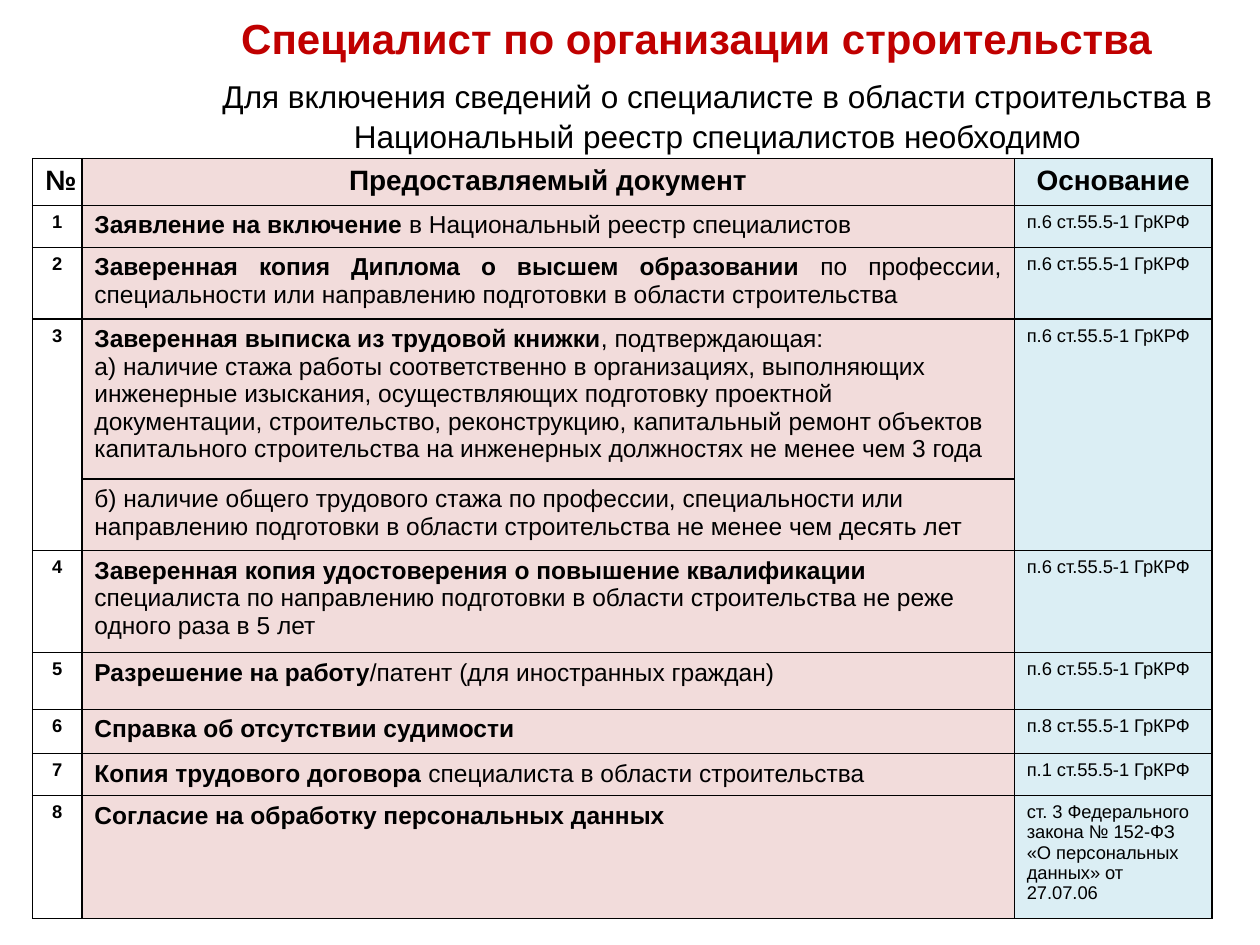
import pptx
import pptx.util
import pptx.dml.color
import pptx.enum.text
import pptx.oxml.ns
import lxml.etree

Inch = pptx.util.Inches
Pt = pptx.util.Pt
ALIGN = pptx.enum.text.PP_ALIGN

THEME = {
    "font": "Arial", "ink": "000000", "title": "C00000",
    "fills": ("FFFFFF", "F2DCDB", "DBEEF4"),
    "size": {"title": 24, "lead": 18, "head": 16, "body": 14, "note": 10.5},
    "line": 1,
}
SIZE = THEME["size"]

TITLE = "Специалист по организации строительства"
LEAD = ("Для включения сведений о специалисте в области строительства "
        "в Национальный реестр специалистов необходимо")
HEAD = ("№", "Предоставляемый документ", "Основание")
BASE = "п.6 ст.55.5-1 ГрКРФ"

# Each document paragraph is a pair: bold part, plain part.
ROWS = [
    ("1", [("Заявление на включение ", "в Национальный реестр специалистов")], BASE),
    ("2", [("Заверенная копия Диплома о высшем образовании ",
            "по профессии, специальности или направлению подготовки "
            "в области строительства")], BASE),
    ("3", [("Заверенная выписка из трудовой книжки", ", подтверждающая:"),
           ("", "а) наличие стажа работы соответственно в организациях, выполняющих "
                "инженерные изыскания, осуществляющих подготовку проектной документации, "
                "строительство, реконструкцию, капитальный ремонт объектов капитального "
                "строительства на инженерных должностях не менее чем 3 года")], BASE),
    ("", [("", "б) наличие общего трудового стажа по профессии, специальности или "
               "направлению подготовки в области строительства не менее чем десять лет")], ""),
    ("4", [("Заверенная копия удостоверения о повышение квалификации ",
            "специалиста по направлению подготовки в области строительства "
            "не реже одного раза в 5 лет")], BASE),
    ("5", [("Разрешение на работу", "/патент (для иностранных граждан)")], BASE),
    ("6", [("Справка об отсутствии судимости", "")], "п.8 ст.55.5-1 ГрКРФ"),
    ("7", [("Копия трудового договора ", "специалиста в области строительства")],
     "п.1 ст.55.5-1 ГрКРФ"),
    ("8", [("Согласие на обработку персональных данных", "")],
     "ст. 3 Федерального закона № 152-ФЗ «О персональных данных» от 27.07.06"),
]
WIDE = (0.39, 7.4, 1.57)
HIGH = (0.37, 0.33, 0.57, 1.27, 0.56, 0.81, 0.45, 0.35, 0.33, 0.82)
JOIN = (3, 4)
FULL = 2


def write(frame, paras, size, color=THEME["ink"], align=ALIGN.LEFT, gap=None):
    frame.word_wrap = True
    for num, pair in enumerate(paras):
        para = frame.paragraphs[0] if num == 0 else frame.add_paragraph()
        para.alignment = align
        if gap:
            para.line_spacing = gap
        para.font.size = Pt(size)
        for text, bold in zip(pair, (True, False)):
            if text:
                run = para.add_run()
                run.text = text
                run.font.name = THEME["font"]
                run.font.size = Pt(size)
                run.font.bold = bold
                run.font.color.rgb = pptx.dml.color.RGBColor.from_string(color)


def label(slide, place, pair, **form):
    box = slide.shapes.add_textbox(*map(Inch, place))
    write(box.text_frame, [pair], align=ALIGN.CENTER, **form)


def paint(cell, fill):
    props = cell._tc.get_or_add_tcPr()
    name = pptx.oxml.ns.qn
    for side in ("L", "R", "T", "B"):
        line = lxml.etree.SubElement(props, name("a:ln" + side),
                                     w=str(Pt(THEME["line"])))
        solid = lxml.etree.SubElement(line, name("a:solidFill"))
        lxml.etree.SubElement(solid, name("a:srgbClr"), val=THEME["ink"])
    cell.fill.solid()
    cell.fill.fore_color.rgb = pptx.dml.color.RGBColor.from_string(fill)


def grid(slide):
    table = slide.shapes.add_table(len(HIGH), len(WIDE), Inch(0.26), Inch(1.26),
                                   Inch(sum(WIDE)), Inch(sum(HIGH))).table
    table.first_row = table.horz_banding = False
    for col, wide in zip(table.columns, WIDE):
        col.width = Inch(wide)
    for row, high in zip(table.rows, HIGH):
        row.height = Inch(high)
        for cell, fill in zip(row.cells, THEME["fills"]):
            paint(cell, fill)
    for col in (0, 2):
        table.cell(JOIN[0], col).merge(table.cell(JOIN[1], col))
    for col, text in enumerate(HEAD):
        write(table.cell(0, col).text_frame, [(text, "")],
              size=SIZE["head"], align=ALIGN.CENTER)
    for num, (mark, paras, base) in enumerate(ROWS, 1):
        cells = [table.cell(num, col).text_frame for col in range(3)]
        write(cells[1], paras, size=SIZE["body"],
              align=ALIGN.JUSTIFY if num == FULL else ALIGN.LEFT)
        if mark:
            write(cells[0], [(mark, "")], size=SIZE["note"], align=ALIGN.CENTER)
            write(cells[2], [("", base)], size=SIZE["note"])


def main():
    deck = pptx.Presentation()
    deck.slide_width, deck.slide_height = Inch(10), Inch(7.5)
    slide = deck.slides.add_slide(deck.slide_layouts[6])
    label(slide, (1.63, 0.05, 7.8, 0.5), (TITLE, ""),
          size=SIZE["title"], color=THEME["title"])
    label(slide, (1.05, 0.55, 9.29, 1.01), ("", LEAD), size=SIZE["lead"], gap=1.05)
    grid(slide)
    deck.save("out.pptx")


if __name__ == "__main__":
    main()
